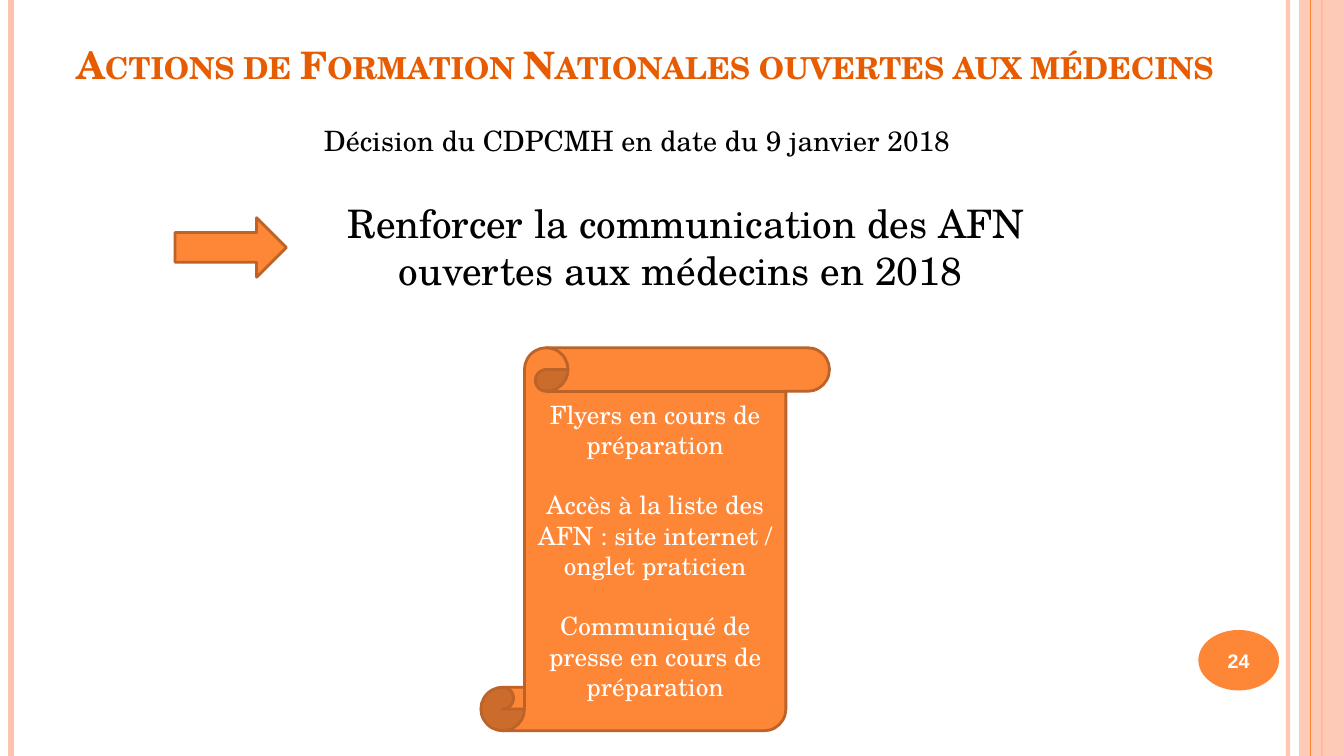
import pptx
import pptx.dml.color
import pptx.enum.shapes
import pptx.enum.text
import pptx.oxml.ns
import pptx.util
from lxml import etree

Pt = pptx.util.Pt
RGBColor = pptx.dml.color.RGBColor
SHAPES = pptx.enum.shapes.MSO_SHAPE
ANCHOR = pptx.enum.text.MSO_ANCHOR
qn = pptx.oxml.ns.qn

ORANGE = RGBColor(0xFE, 0x86, 0x37)
DARK_ORANGE = RGBColor(0xBC, 0x63, 0x29)
TITLE_ORANGE = RGBColor(0xE7, 0x5C, 0x01)
PEACH = RGBColor(0xFE, 0xC3, 0xAE)
WHITE = RGBColor(0xFF, 0xFF, 0xFF)
BLACK = RGBColor(0, 0, 0)
SERIF = "TeX Gyre Schola"
SANS = "Arial"

WIDTH, HEIGHT = 960, 540
TITLE = "Actions de Formation Nationales ouvertes aux médecins"
DECISION = "Décision du CDPCMH en date du 9 janvier 2018"
GOAL = "Renforcer la communication des AFN ouvertes aux médecins en 2018 "
MEASURES = [
    "Flyers en cours de préparation",
    "Accès à la liste des AFN : site internet / onglet praticien",
    "Communiqué de presse en cours de préparation",
]
PAGE_NUMBER = "24"

# x, colour, line width, opacity in percent
STRIPES_BEHIND_BAND = [(920, PEACH, 3, 93), (8, PEACH, 4.5, 100), (944, ORANGE, 1.5, 100)]
STRIPE_BESIDE_BAND = (936, ORANGE, 0.75, 100)


def set_opacity(shape, percent):
    color = next(shape._element.iter(qn("a:srgbClr")))
    etree.SubElement(color, qn("a:alpha")).set("val", str(percent * 1000))


def add_stripe(slide, x, color, width, opacity):
    stripe = slide.shapes.add_connector(
        pptx.enum.shapes.MSO_CONNECTOR.STRAIGHT, Pt(x), Pt(0), Pt(x), Pt(HEIGHT))
    stripe.line.color.rgb = color
    stripe.line.width = Pt(width)
    if opacity < 100:
        set_opacity(stripe, opacity)
    etree.SubElement(stripe._element.spPr, qn("a:effectLst"))


def add_figure(slide, kind, box, fill, outline=None):
    shape = slide.shapes.add_shape(kind, *map(Pt, box))
    shape.shadow.inherit = False
    shape.fill.solid()
    shape.fill.fore_color.rgb = fill
    if outline is None:
        shape.line.fill.background()
    else:
        shape.line.color.rgb = outline
        shape.line.width = Pt(2)
    return shape


def write(shape, lines, size, color, name=SERIF, bold=False, anchor=ANCHOR.TOP, gap=0):
    """Fill a shape with centred paragraphs, separated by gap points."""
    frame = shape.text_frame
    frame.word_wrap = True
    frame.vertical_anchor = anchor
    frame.text = "\n".join(lines)
    for index, paragraph in enumerate(frame.paragraphs):
        paragraph.alignment = pptx.enum.text.PP_ALIGN.CENTER
        paragraph.space_before = Pt(gap if index else 0)
        paragraph.font.name = name
        paragraph.font.size = Pt(size)
        paragraph.font.bold = bold
        paragraph.font.color.rgb = color
    return frame


def add_text(slide, box, text, size, color, **style):
    return write(slide.shapes.add_textbox(*map(Pt, box)), [text], size, color, **style)


def main():
    presentation = pptx.Presentation()
    presentation.slide_width, presentation.slide_height = Pt(WIDTH), Pt(HEIGHT)
    slide = presentation.slides.add_slide(presentation.slide_layouts[6])

    for stripe in STRIPES_BEHIND_BAND:
        add_stripe(slide, *stripe)
    band = add_figure(slide, SHAPES.RECTANGLE, (928, 0, 32, HEIGHT), PEACH)
    set_opacity(band, 87)
    add_stripe(slide, *STRIPE_BESIDE_BAND)

    badge = add_figure(slide, SHAPES.OVAL, (856, 450, 57.6, 43.2), ORANGE)
    write(badge, [PAGE_NUMBER], 14, WHITE, name=SANS, bold=True, anchor=ANCHOR.MIDDLE)

    title = add_text(slide, (21.6, 5, 878.4, 60.5), TITLE, 27, TITLE_ORANGE,
                     bold=True, anchor=ANCHOR.BOTTOM)
    title.paragraphs[0].runs[0]._r.get_or_add_rPr().set("cap", "small")

    add_text(slide, (219.6, 85, 471, 31.5), DECISION, 20, BLACK)
    add_figure(slide, SHAPES.RIGHT_ARROW, (125, 155.5, 79.5, 42.5), ORANGE, DARK_ORANGE)
    add_text(slide, (183, 139, 614, 75), GOAL, 28, BLACK)

    scroll = add_figure(slide, SHAPES.VERTICAL_SCROLL, (343.5, 248.4, 249, 273.6),
                        ORANGE, DARK_ORANGE)
    write(scroll, MEASURES, 18, WHITE, anchor=ANCHOR.MIDDLE, gap=21.6)

    presentation.save("out.pptx")


if __name__ == "__main__":
    main()
